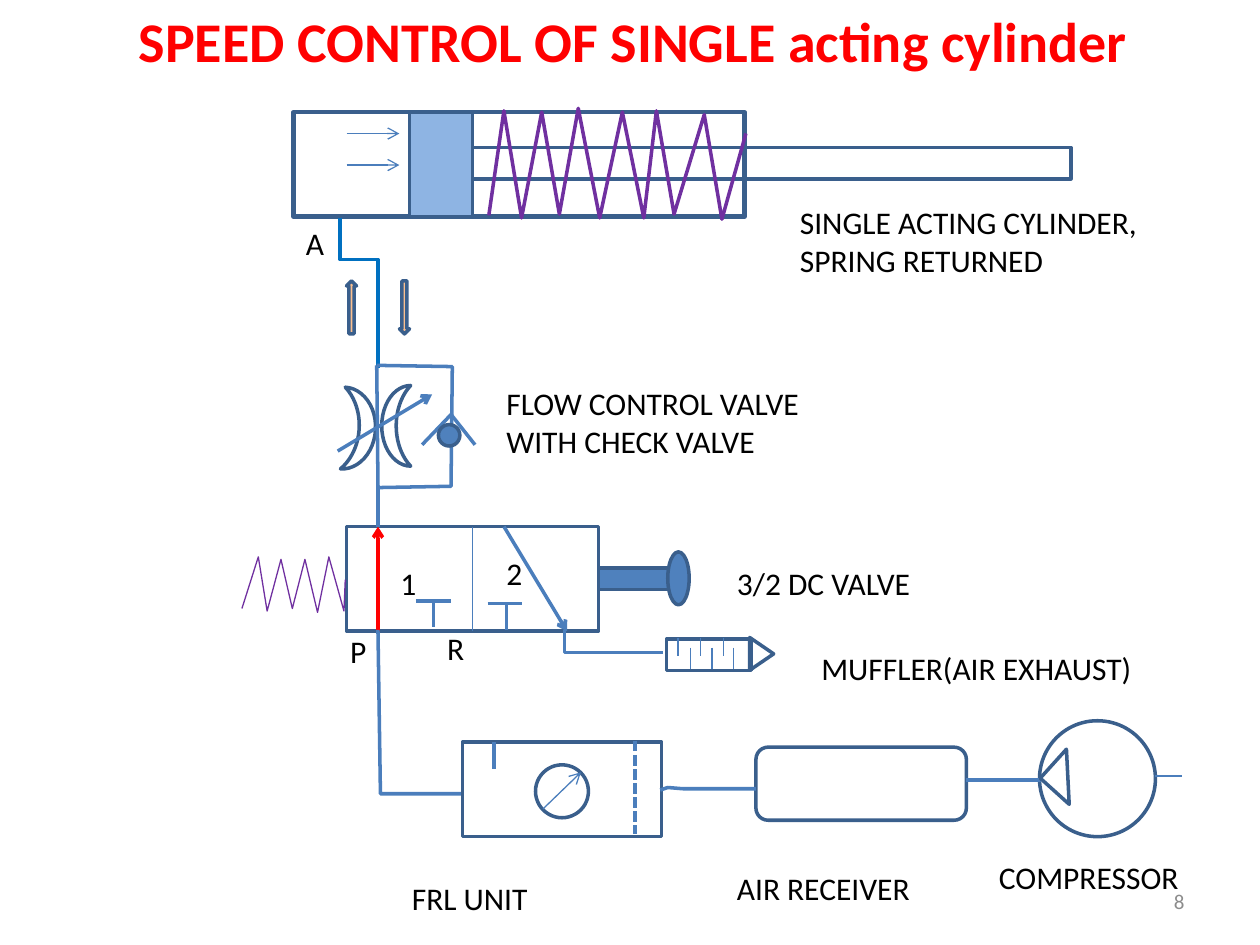
"""Draw the speed control circuit of a single acting cylinder."""
from dataclasses import dataclass
from typing import Any

import lxml.etree
import pptx
import pptx.dml.color
import pptx.enum.dml
import pptx.enum.shapes
import pptx.enum.text
import pptx.oxml.ns
import pptx.util

PX = 9144
FONT = "Calibri"
INK = {
    "edge": "3A5F8C", "wire": "4B7EBC", "blue": "4F81BD", "pale": "8EB4E3",
    "pipe": "0070C0", "spring": "7030A0", "red": "FF0000", "peach": "FAC090",
    "white": "FFFFFF", "black": "000000", "grey": "8C8C8C",
}
KIND = pptx.enum.shapes.MSO_SHAPE
ALIGN = pptx.enum.text.PP_ALIGN
ANCHOR = pptx.enum.text.MSO_ANCHOR


@dataclass
class Box:
    kind: Any
    x: int
    y: int
    w: int
    h: int
    fill: str = ""
    pen: float = 2
    turn: float = 0


@dataclass
class Wire:
    x: int
    y: int
    to_x: int
    to_y: int
    ink: str = "wire"
    pen: float = 2
    arrow: bool = False
    dash: bool = False


@dataclass
class Trace:
    points: list[tuple[int, int]]
    ink: str = "wire"
    pen: float = 2
    close: bool = False


@dataclass
class Note:
    text: str
    x: int
    y: int
    w: int
    h: int = 40
    size: int = 18
    ink: str = "black"
    bold: bool = False
    align: Any = ALIGN.LEFT
    anchor: Any = ANCHOR.TOP


def tint(name: str) -> pptx.dml.color.RGBColor:
    return pptx.dml.color.RGBColor.from_string(INK[name])


def stroke(shape: Any, ink: str, pen: float) -> None:
    shape.line.color.rgb = tint(ink)
    shape.line.width = pptx.util.Pt(pen)


def draw_box(slide: Any, box: Box) -> None:
    shape = slide.shapes.add_shape(
        box.kind, box.x * PX, box.y * PX, box.w * PX, box.h * PX)
    shape.shadow.inherit = False
    shape.rotation = box.turn
    if box.fill:
        shape.fill.solid()
        shape.fill.fore_color.rgb = tint(box.fill)
    else:
        shape.fill.background()
    stroke(shape, "edge", box.pen)


def draw_wire(slide: Any, wire: Wire) -> None:
    line = slide.shapes.add_connector(
        pptx.enum.shapes.MSO_CONNECTOR.STRAIGHT,
        wire.x * PX, wire.y * PX, wire.to_x * PX, wire.to_y * PX)
    stroke(line, wire.ink, wire.pen)
    if wire.dash:
        line.line.dash_style = pptx.enum.dml.MSO_LINE.SQUARE_DOT
    tag = pptx.oxml.ns.qn
    props = line.element.spPr
    if wire.arrow:
        lxml.etree.SubElement(
            props.find(tag("a:ln")), tag("a:tailEnd"), type="arrow")
    lxml.etree.SubElement(props, tag("a:effectLst"))


def draw_trace(slide: Any, trace: Trace) -> None:
    first, *rest = trace.points
    pen = slide.shapes.build_freeform(*first, scale=PX)
    pen.add_line_segments(rest, close=trace.close)
    shape = pen.convert_to_shape()
    shape.shadow.inherit = False
    shape.fill.background()
    stroke(shape, trace.ink, trace.pen)


def write(shape: Any, note: Note) -> None:
    shape.left, shape.top = note.x * PX, note.y * PX
    shape.width, shape.height = note.w * PX, note.h * PX
    frame = shape.text_frame
    frame.text = note.text
    frame.word_wrap = True
    frame.auto_size = pptx.enum.text.MSO_AUTO_SIZE.NONE
    frame.vertical_anchor = note.anchor
    para = frame.paragraphs[0]
    para.alignment = note.align
    font = para.runs[0].font
    font.name, font.bold = FONT, note.bold
    font.size = pptx.util.Pt(note.size)
    font.color.rgb = tint(note.ink)


def draw_note(slide: Any, note: Note) -> None:
    write(slide.shapes.add_textbox(0, 0, PX, PX), note)


TITLE = Note("SPEED CONTROL OF SINGLE acting cylinder",
             100, 0, 833, 64, 32, "red", True)

CYLINDER = [
    Box(KIND.RECTANGLE, 233, 89, 358, 83, "white", 2.5),
    Box(KIND.RECTANGLE, 325, 89, 50, 83, "pale"),
    Box(KIND.RECTANGLE, 375, 117, 475, 25),
    Trace([(388, 171), (400, 88), (414, 173), (430, 89), (444, 170),
           (459, 86), (476, 173), (494, 89), (511, 173), (521, 88),
           (535, 170), (559, 91), (573, 174), (592, 106)], "spring"),
    *[Wire(275, y, 317, y, pen=0.75, arrow=True) for y in (106, 131)],
    Trace([(270, 173), (270, 206), (300, 206), (300, 292)], "pipe"),
    Box(KIND.UP_ARROW, 275, 223, 8, 42, "peach"),
    Box(KIND.DOWN_ARROW, 317, 223, 8, 42, "peach"),
]

VALVE = [
    Box(KIND.RECTANGLE, 275, 418, 200, 83),
    Wire(375, 418, 375, 501, pen=0.75),
    Wire(300, 501, 300, 418, "red", arrow=True),
    Wire(400, 418, 450, 501, arrow=True),
    Box(KIND.RECTANGLE, 475, 451, 58, 17, "blue"),
    Box(KIND.OVAL, 530, 438, 17, 42, "blue"),
    Wire(330, 477, 358, 477),
    Wire(344, 477, 344, 498),
    Wire(387, 479, 414, 479),
    Wire(402, 479, 402, 500),
    Trace([(192, 483), (205, 442), (212, 485), (223, 444), (232, 483),
           (242, 444), (252, 486), (261, 442), (273, 485), (274, 460)],
          "spring", 0.75),
]

MUFFLER = [
    Trace([(448, 500), (448, 518), (526, 518)]),
    Box(KIND.RECTANGLE, 529, 507, 67, 25),
    Trace([(595, 532), (595, 506), (614, 519)], "edge", close=True),
    *[Wire(x, 506, x, 521, pen=0.75) for x in range(538, 575, 18)],
    *[Wire(x, 514, x, 531, pen=0.75) for x in range(548, 583, 17)],
]

SUPPLY = [
    Trace([(300, 500), (302, 630), (367, 630)]),
    Box(KIND.RECTANGLE, 367, 589, 158, 75),
    Wire(504, 588, 504, 662, dash=True),
    Wire(392, 589, 392, 610),
    Box(KIND.OVAL, 425, 607, 42, 42),
    Wire(431, 642, 461, 613, pen=0.75, arrow=True),
    Box(KIND.ROUNDED_RECTANGLE, 600, 593, 167, 58),
    Trace([(524, 627), (530, 625), (542, 626), (600, 626)]),
    Box(KIND.OVAL, 825, 572, 92, 92),
    Wire(767, 619, 826, 619),
    Box(KIND.RIGHT_TRIANGLE, 832, 601, 31, 31, turn=42.1),
    Wire(917, 616, 938, 616, pen=0.75),
]

CONTROL = [
    Box(KIND.MOON, 303, 306, 23, 64),
    Box(KIND.MOON, 272, 308, 26, 65, turn=183.4),
    Wire(299, 290, 300, 386),
    Wire(268, 358, 343, 313, arrow=True),
    Trace([(299, 290), (359, 291), (358, 386), (300, 387)]),
    Trace([(335, 353), (358, 329), (377, 353)]),
    Box(KIND.OVAL, 348, 337, 17, 17, "blue"),
    Wire(300, 418, 300, 386),
]

NOTES = [
    Note("A", 233, 173, 42),
    Note("P", 268, 497, 33),
    Note("R", 345, 494, 25),
    Note("1", 308, 443, 25),
    Note("2", 392, 435, 50),
    Note("SINGLE ACTING CYLINDER, SPRING RETURNED", 625, 156, 317, 71),
    Note("FLOW CONTROL VALVE WITH CHECK VALVE", 392, 300, 258, 71),
    Note("3/2 DC VALVE", 575, 443, 358),
    Note("MUFFLER(AIR EXHAUST)", 642, 510, 300),
    Note("FRL UNIT", 317, 693, 208),
    Note("AIR RECEIVER", 575, 685, 192),
    Note("COMPRESSOR", 783, 676, 175),
    Note("8", 717, 695, 233, 40, 12, "grey",
         align=ALIGN.RIGHT, anchor=ANCHOR.MIDDLE),
]

DRAW = {Box: draw_box, Wire: draw_wire, Trace: draw_trace, Note: draw_note}


def main() -> None:
    deck = pptx.Presentation()
    deck.slide_width, deck.slide_height = 1000 * PX, 750 * PX
    slide = deck.slides.add_slide(deck.slide_layouts[5])
    write(slide.shapes.title, TITLE)
    for part in CYLINDER + VALVE + MUFFLER + SUPPLY + CONTROL + NOTES:
        DRAW[type(part)](slide, part)
    deck.save("out.pptx")


if __name__ == "__main__":
    main()
